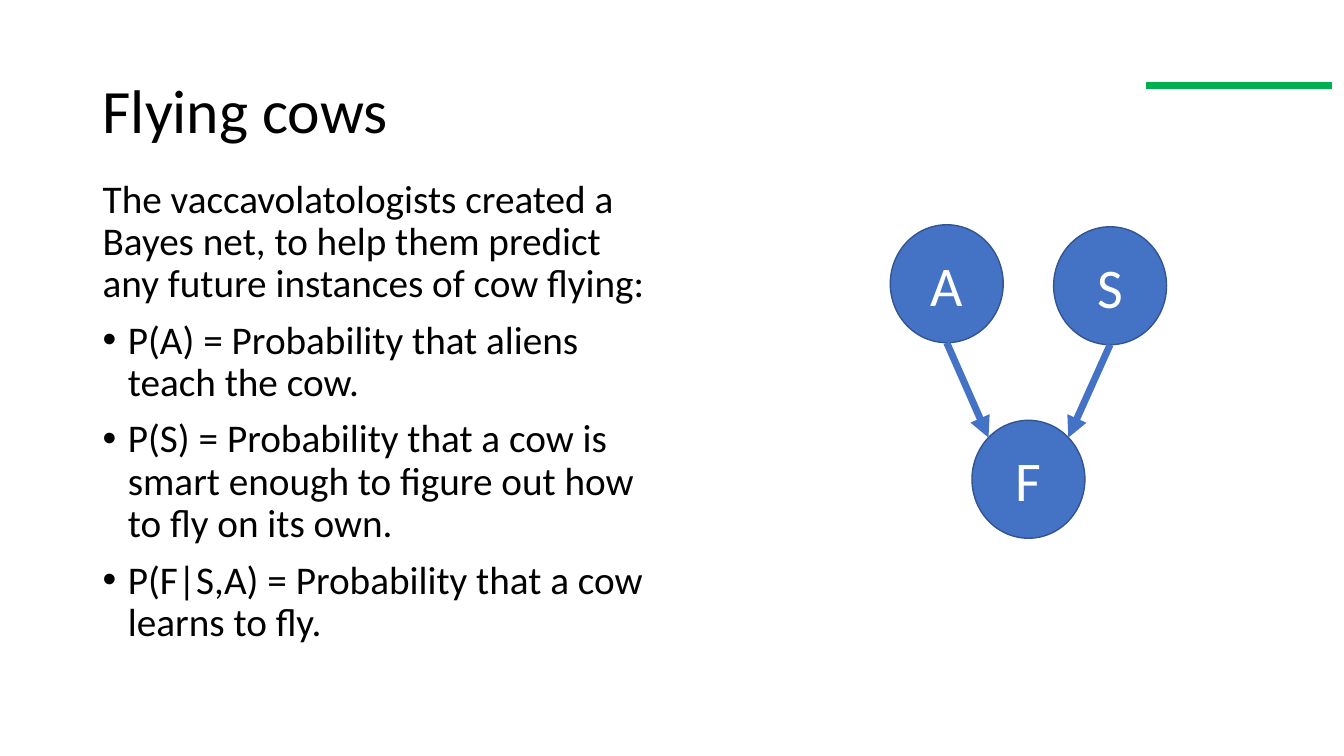
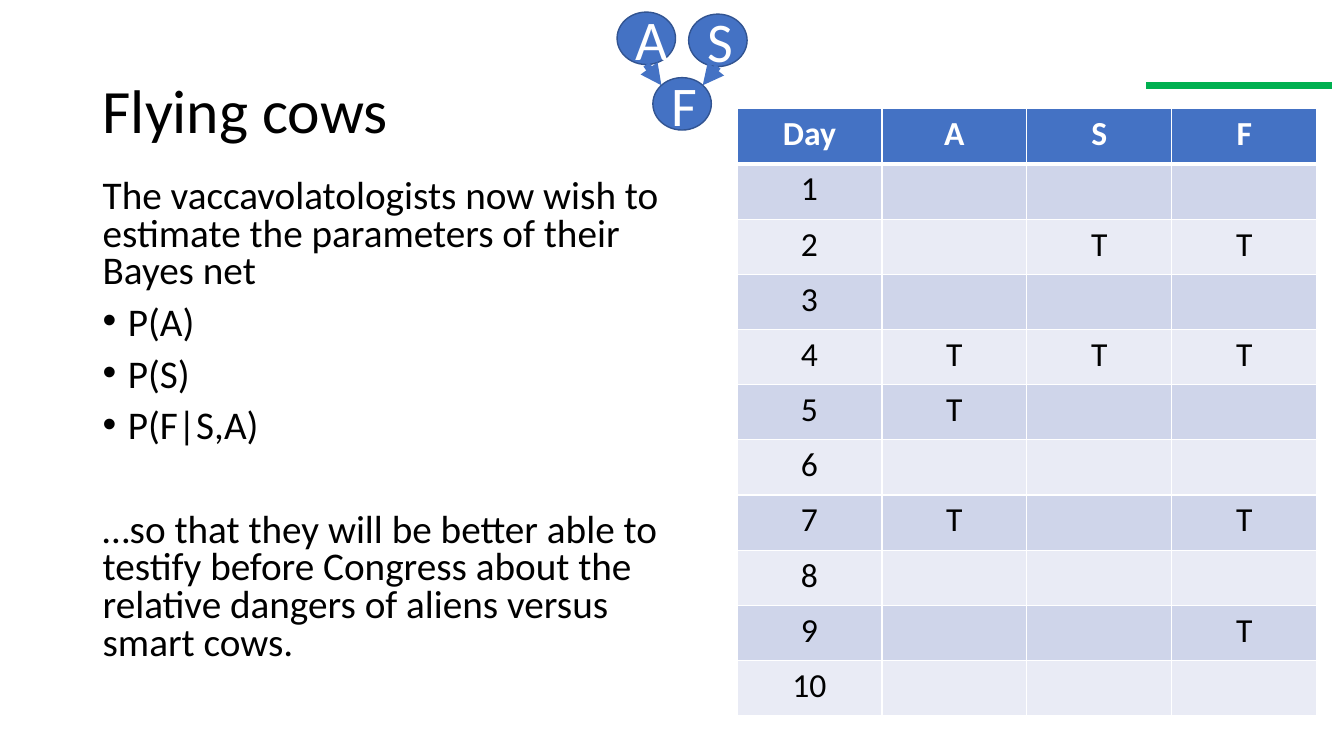
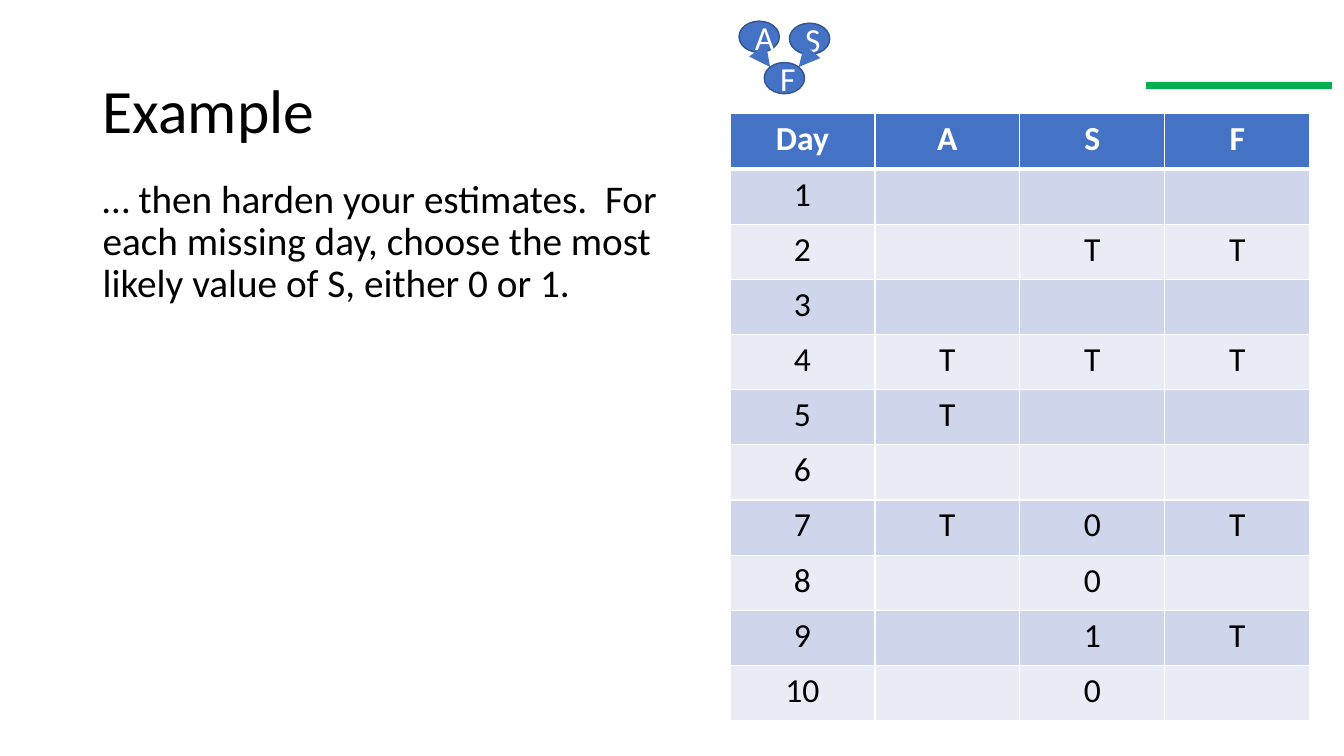
from dataclasses import dataclass
from math import sqrt

from lxml.etree import SubElement
from pptx import Presentation
from pptx.dml.color import RGBColor
from pptx.enum.shapes import MSO_CONNECTOR, MSO_SHAPE
from pptx.enum.text import MSO_ANCHOR, PP_ALIGN
from pptx.oxml.ns import qn
from pptx.util import Inches, Pt


@dataclass(frozen=True)
class Theme:
    font: str = "Calibri"
    text: str = "000000"
    white: str = "FFFFFF"
    blue: str = "4472C4"
    outline: str = "325491"
    green: str = "00B050"
    bands: tuple = ("CFD5EA", "E9EBF5")
    title_size: int = 44
    body_size: int = 28
    table_size: int = 24
    rule_width: int = 5


def rgb(value):
    return RGBColor.from_string(value)


class Deck:
    def __init__(self, theme):
        self.theme = theme
        self.prs = Presentation()
        self.prs.slide_width = Inches(13.33)
        self.prs.slide_height = Inches(7.5)
        self.s = None

    def slide(self, title):
        """Start a slide with its title and the green rule."""
        self.s = self.prs.slides.add_slide(self.prs.slide_layouts[6])
        tf = self.text_box(0.92, 0.4, 11.5, 1.45)
        tf.vertical_anchor = MSO_ANCHOR.MIDDLE
        p = tf.paragraphs[0]
        p.text = title
        p.line_spacing = 0.9
        self.style(p, self.theme.title_size, self.theme.text)
        self.line(11.37, 0.85, 13.21, 0.85, self.theme.green)

    def style(self, p, size, color, bold=False):
        for r in p.runs:
            r.font.name = self.theme.font
            r.font.size = Pt(size)
            r.font.bold = bold
            r.font.color.rgb = rgb(color)

    def text_box(self, left, top, width, height):
        box = self.s.shapes.add_textbox(
            Inches(left), Inches(top), Inches(width), Inches(height))
        tf = box.text_frame
        tf.word_wrap = True
        return tf

    def body(self, intro, bullets=(), closing=None, spacing=0.9):
        tf = self.text_box(0.92, 1.73, 5.75, 5.38)
        items = [(intro, False, 10)]
        items += [(text, True, 10) for text in bullets]
        if closing:
            items.append((closing, False, 47))
        for i, (text, bulleted, before) in enumerate(items):
            p = tf.add_paragraph() if i else tf.paragraphs[0]
            p.text = text
            p.line_spacing = spacing
            p.space_before = Pt(before)
            self.style(p, self.theme.body_size, self.theme.text)
            if bulleted:
                self.bullet(p)

    def bullet(self, p):
        pPr = p._p.get_or_add_pPr()
        pPr.set("marL", str(Inches(0.25)))
        pPr.set("indent", str(Inches(-0.25)))
        SubElement(pPr, qn("a:buFont"), typeface="Arial")
        SubElement(pPr, qn("a:buChar"), char="•")

    def line(self, x1, y1, x2, y2, color, arrow=False):
        line = self.s.shapes.add_connector(
            MSO_CONNECTOR.STRAIGHT, Inches(x1), Inches(y1), Inches(x2), Inches(y2))
        line.line.color.rgb = rgb(color)
        line.line.width = Pt(self.theme.rule_width)
        if arrow:
            SubElement(line.line._get_or_add_ln(), qn("a:tailEnd"), type="triangle")
        SubElement(line._element.spPr, qn("a:effectLst"))

    def node(self, label, left, top, width, height, size):
        sp = self.s.shapes.add_shape(
            MSO_SHAPE.OVAL, Inches(left), Inches(top), Inches(width), Inches(height))
        sp.shadow.inherit = False
        sp.fill.solid()
        sp.fill.fore_color.rgb = rgb(self.theme.blue)
        sp.line.color.rgb = rgb(self.theme.outline)
        sp.line.width = Pt(1)
        tf = sp.text_frame
        tf.text = label
        tf.vertical_anchor = MSO_ANCHOR.MIDDLE
        p = tf.paragraphs[0]
        p.alignment = PP_ALIGN.CENTER
        self.style(p, size, self.theme.white)

    def bayes_net(self, left, top, width, height, gap, drop, size):
        """Draw parents A and S, gap apart, with child F midway and drop below."""
        parents = {"A": (left, top), "S": (left + gap, top + 0.02)}
        child_x, child_y = left + gap / 2, top + drop
        for label, (x, y) in {**parents, "F": (child_x, child_y)}.items():
            self.node(label, x, y, width, height, size)
        dx, dy = width / 2 / sqrt(2), height / 2 / sqrt(2)
        for side, (x, y) in zip((-1, 1), parents.values()):
            self.line(x + width / 2, y + height,
                      child_x + width / 2 + side * dx, child_y + height / 2 - dy,
                      self.theme.blue, arrow=True)

    def table(self, left, top, rows):
        t = self.theme
        table = self.s.shapes.add_table(
            len(rows), len(rows[0]),
            Inches(left), Inches(top), Inches(5.75), Inches(6.02)).table
        for i, row in enumerate(rows):
            for j, text in enumerate(row):
                cell = table.cell(i, j)
                header = i == 0
                self.borders(cell, top=3 if i == 1 else 1, bottom=3 if header else 1)
                cell.fill.solid()
                cell.fill.fore_color.rgb = rgb(t.blue if header else t.bands[(i - 1) % 2])
                cell.text_frame.text = text
                p = cell.text_frame.paragraphs[0]
                p.alignment = PP_ALIGN.CENTER
                self.style(p, t.table_size, t.white if header else t.text, header)

    def borders(self, cell, top, bottom):
        tcPr = cell._tc.get_or_add_tcPr()
        for tag, width in (("lnL", 1), ("lnR", 1), ("lnT", top), ("lnB", bottom)):
            ln = SubElement(tcPr, qn(f"a:{tag}"), w=str(Pt(width)))
            fill = SubElement(ln, qn("a:solidFill"))
            SubElement(fill, qn("a:srgbClr"), val=self.theme.white)


def day_rows(smart):
    """Build the ten-day table; smart maps a day to its S value."""
    aliens = dict.fromkeys((4, 5, 7), "T")
    flying = dict.fromkeys((2, 4, 7, 9), "T")
    return [("Day", "A", "S", "F")] + [
        (str(day), *(column.get(day, "") for column in (aliens, smart, flying)))
        for day in range(1, 11)]


def main():
    deck = Deck(Theme())
    observed = {2: "T", 4: "T"}

    deck.slide("Flying cows")
    deck.body(
        "The vaccavolatologists created a Bayes net, to help them predict "
        "any future instances of cow flying:",
        ("P(A) = Probability that aliens teach the cow.",
         "P(S) = Probability that a cow is smart enough to figure out how "
         "to fly on its own.",
         "P(F|S,A) = Probability that a cow learns to fly."))
    deck.bayes_net(8.83, 2.23, 1.12, 1.17, gap=1.62, drop=1.94, size=40)

    deck.slide("Flying cows")
    deck.body(
        "The vaccavolatologists now wish to estimate the parameters of their Bayes net",
        ("P(A)", "P(S)", "P(F|S,A)"),
        "…so that they will be better able to testify before Congress about "
        "the relative dangers of aliens versus smart cows.",
        spacing=0.8)
    deck.bayes_net(6.12, 0.12, 0.58, 0.52, gap=0.71, drop=0.65, size=40)
    deck.table(7.31, 1.08, day_rows(observed))

    deck.slide("Example")
    deck.body("… then harden your estimates.  For each missing day, choose the most "
              "likely value of S, either 0 or 1.")
    deck.table(7.24, 1.13, day_rows({**observed, 7: "0", 8: "0", 9: "1", 10: "0"}))
    deck.bayes_net(7.33, 0.21, 0.4, 0.31, gap=0.5, drop=0.41, size=24)

    deck.prs.save("out.pptx")


if __name__ == "__main__":
    main()
